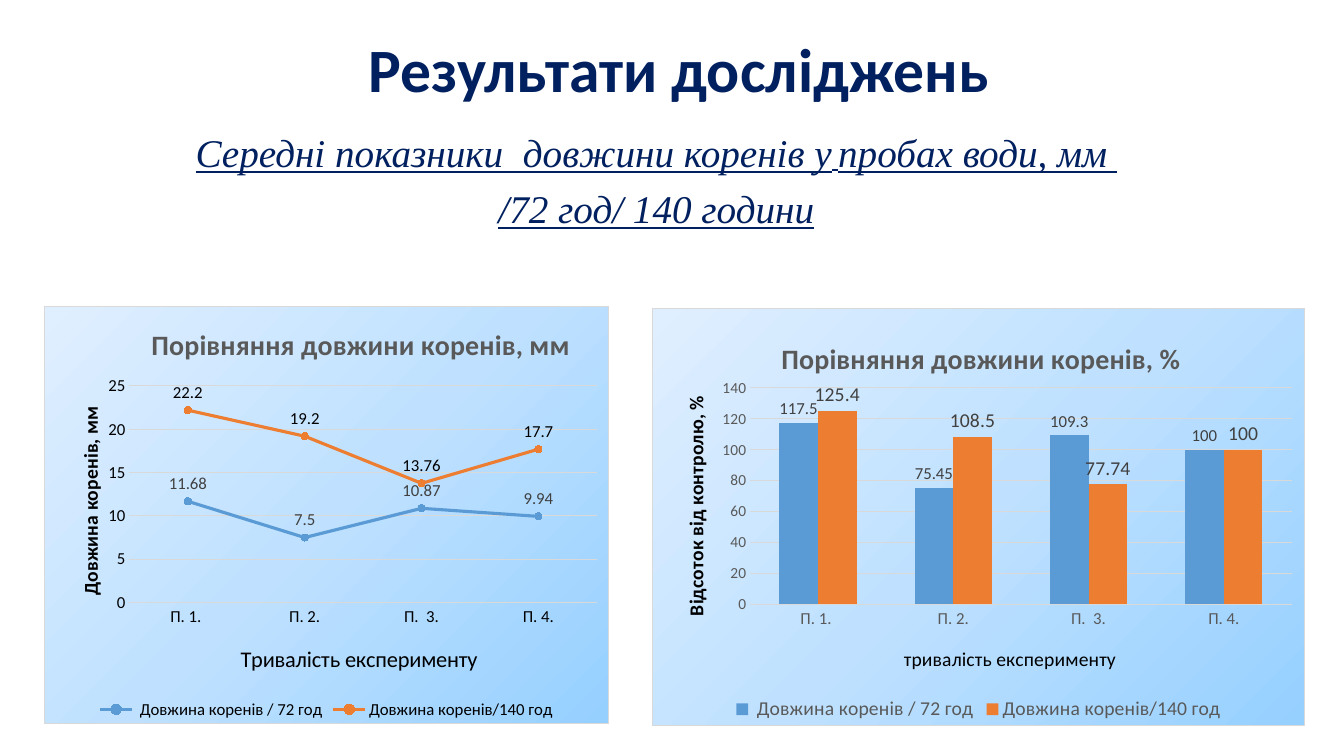
from lxml import etree
from pptx import Presentation
from pptx.chart.data import CategoryChartData
from pptx.dml.color import RGBColor
from pptx.enum.chart import (XL_CHART_TYPE, XL_LABEL_POSITION, XL_LEGEND_POSITION,
                             XL_MARKER_STYLE, XL_TICK_MARK)
from pptx.enum.text import MSO_ANCHOR, PP_ALIGN
from pptx.oxml import parse_xml
from pptx.oxml.ns import nsdecls, qn
from pptx.util import Cm, Pt

LINE, COLUMNS = XL_CHART_TYPE.LINE_MARKERS, XL_CHART_TYPE.COLUMN_CLUSTERED
ABOVE, OUTSIDE = XL_LABEL_POSITION.ABOVE, XL_LABEL_POSITION.OUTSIDE_END
BOTTOM = XL_LEGEND_POSITION.BOTTOM
CIRCLE = XL_MARKER_STYLE.CIRCLE
NO_TICK = XL_TICK_MARK.NONE
CENTER, TOP, MIDDLE = PP_ALIGN.CENTER, MSO_ANCHOR.TOP, MSO_ANCHOR.MIDDLE

COLORS = {
    "navy": "002060", "black": "000000", "gray": "595959", "dark": "404040",
    "rule": "D9D9D9", "blue": "5B9BD5", "orange": "ED7D31",
}
GRADIENT = [(0, "96D0FF"), (50, "BFE1FF"), (100, "E0EFFF")]
SAMPLES = ["П. 1. ", "П. 2.", "П.  3.", "П. 4."]
SERIES_NAMES = [" Довжина коренів / 72 год", "Довжина коренів/140 год"]
SERIES_COLORS = ["blue", "orange"]
PLOT_AREA = (0.15, 0.19, 0.83, 0.52)


def rgb(name):
    return RGBColor.from_string(COLORS[name])


def place(element, x, y, width=None, height=None):
    """Position a chart part by fractions of the chart's size."""
    layout = element.find(qn("c:layout"))
    if layout is None:
        layout = etree.Element(qn("c:layout"))
        element.insert(0 if element.find(qn("c:tx")) is None else 1, layout)
    manual = etree.SubElement(layout, qn("c:manualLayout"))
    settings = [("xMode", "edge"), ("yMode", "edge"), ("x", x), ("y", y)]
    if width:
        settings = [("layoutTarget", "inner")] + settings + [("w", width), ("h", height)]
    for tag, value in settings:
        etree.SubElement(manual, qn(f"c:{tag}")).set("val", str(value))


class ResultsSlide:
    def __init__(self, page, font="Calibri"):
        self.page, self.font = page, font

    def style(self, font, size, color, bold=False, italic=False, name=None):
        font.name, font.size = name or self.font, Pt(size)
        font.bold, font.italic = bold, italic
        font.color.rgb = rgb(color)

    def text(self, left, top, width, height, lines, anchor=TOP, spacing=1.0, after=0):
        """Each line is a list of (text, font options, underlined) runs."""
        box = self.page.shapes.add_textbox(Cm(left), Cm(top), Cm(width), Cm(height))
        frame = box.text_frame
        frame.word_wrap, frame.vertical_anchor = True, anchor
        for index, line in enumerate(lines):
            para = frame.paragraphs[0] if index == 0 else frame.add_paragraph()
            para.alignment, para.line_spacing = CENTER, spacing
            para.space_after = Pt(after)
            for words, options, underlined in line:
                span = para.add_run()
                span.text = words
                self.style(span.font, color="navy", **options)
                span.font.underline = underlined

    def chart_title(self, title, words, position, size, color="black", bold=False, turn=0):
        span = title.text_frame.paragraphs[0].add_run()
        span.text = words
        self.style(span.font, size, color, bold)
        element = title._element
        element.find(".//" + qn("a:bodyPr")).set("rot", str(turn * 60000))
        place(element, *position)

    def axis(self, axis, size, color, line=None):
        axis.major_tick_mark = axis.minor_tick_mark = NO_TICK
        self.style(axis.tick_labels.font, size, color)
        if line:
            axis.format.line.color.rgb, axis.format.line.width = rgb(line), Pt(0.75)
        else:
            axis.format.line.fill.background()

    def background(self, chart):
        stops = "".join(f'<a:gs pos="{share * 1000}"><a:srgbClr val="{color}"/></a:gs>'
                        for share, color in GRADIENT)
        chart._chartSpace.find(qn("c:chart")).addnext(parse_xml(
            f'<c:spPr {nsdecls("c", "a")}><a:gradFill><a:gsLst>{stops}</a:gsLst>'
            '<a:lin ang="13500000" scaled="0"/></a:gradFill><a:ln w="9525"><a:solidFill>'
            f'<a:srgbClr val="{COLORS["rule"]}"/></a:solidFill></a:ln></c:spPr>'))

    def series(self, series, color, is_line, label_size, label_color):
        if is_line:
            series.smooth = False
            series.format.line.color.rgb = rgb(color)
            series.format.line.width = Pt(2.25)
            series.marker.style, series.marker.size = CIRCLE, 5
            for part in (series.marker.format.fill, series.marker.format.line.fill):
                part.solid()
                part.fore_color.rgb = rgb(color)
        else:
            series.format.fill.solid()
            series.format.fill.fore_color.rgb = rgb(color)
        labels = series.data_labels
        labels.show_value = True
        labels.position = ABOVE if is_line else OUTSIDE
        self.style(labels.font, label_size, label_color)

    def chart(self, kind, frame, values, labels, titles, category, value, legend, step, top):
        data = CategoryChartData()
        data.categories = SAMPLES
        for name, numbers in zip(SERIES_NAMES, values):
            data.add_series(name, numbers)
        chart = self.page.shapes.add_chart(kind, *map(Cm, frame), data).chart
        self.style(chart.font, 10, "black")
        self.background(chart)

        chart.has_title = True
        for title, options in zip((chart.chart_title, chart.category_axis.axis_title,
                                   chart.value_axis.axis_title), titles):
            self.chart_title(title, **options)
        self.axis(chart.category_axis, **category)
        self.axis(chart.value_axis, **value)
        chart.value_axis.minimum_scale, chart.value_axis.maximum_scale = 0, top
        chart.value_axis.major_unit = step
        grid = chart.value_axis.major_gridlines.format.line
        grid.color.rgb, grid.width = rgb("rule"), Pt(0.75)

        chart.has_legend = True
        chart.legend.position, chart.legend.include_in_layout = BOTTOM, False
        self.style(chart.legend.font, *legend)

        plot = chart.plots[0]
        plot.vary_by_categories = False
        if kind == COLUMNS:
            plot.gap_width, plot.overlap = 150, 0
        for series, color, label in zip(plot.series, SERIES_COLORS, labels):
            self.series(series, color, kind == LINE, *label)
        place(chart._chartSpace.find(".//" + qn("c:plotArea")), *PLOT_AREA)


def main():
    deck = Presentation()
    deck.slide_width, deck.slide_height = Cm(33.87), Cm(19.05)
    slide = ResultsSlide(deck.slides.add_slide(deck.slide_layouts[6]))

    slide.text(8.23, 0, 17.75, 3.68,
               [[("Результати досліджень", {"size": 44, "bold": True}, False)]],
               anchor=MIDDLE, spacing=0.9)
    serif = {"size": 28, "italic": True, "name": "Times New Roman"}
    slide.text(0.18, 3.23, 32.72, 2.74, [
        [("Середні показники  довжини коренів у", serif, True),
         (" ", {"size": 20, "italic": True}, True),
         ("пробах води, мм ", serif, True)],
        [("/72 год/ 140 години", serif, True)],
    ], spacing=Pt(30), after=10)

    heading = {"size": 20, "color": "gray", "bold": True}
    upright = {"size": 14, "bold": True, "turn": -90}
    slide.chart(
        LINE, (1.12, 7.72, 14.22, 10.52),
        values=[(11.68, 7.5, 10.87, 9.94), (22.2, 19.2, 13.76, 17.7)],
        labels=[(12, "dark"), (12, "black")],
        titles=[
            dict(heading, words="Порівняння довжини коренів, мм", position=(0.18, 0.03)),
            {"words": "Тривалість експерименту", "position": (0.34, 0.8), "size": 16},
            dict(upright, words="Довжина коренів, мм", position=(0.05, 0.23)),
        ],
        category={"size": 12, "color": "black", "line": "rule"},
        value={"size": 12, "color": "black"},
        legend=(12, "black"), step=5, top=25)
    slide.chart(
        COLUMNS, (16.43, 7.77, 16.46, 10.52),
        values=[(117.5, 75.45, 109.3, 100), (125.4, 108.5, 77.74, 100)],
        labels=[(12, "dark"), (14, "dark")],
        titles=[
            dict(heading, words="Порівняння довжини коренів, %", position=(0.19, 0.06)),
            {"words": "тривалість експерименту", "position": (0.38, 0.8), "size": 14},
            dict(upright, words="Відсоток від контролю, %", position=(0.04, 0.2)),
        ],
        category={"size": 12, "color": "gray"},
        value={"size": 11, "color": "gray"},
        legend=(14, "gray"), step=20, top=140)

    deck.save("out.pptx")


if __name__ == "__main__":
    main()
